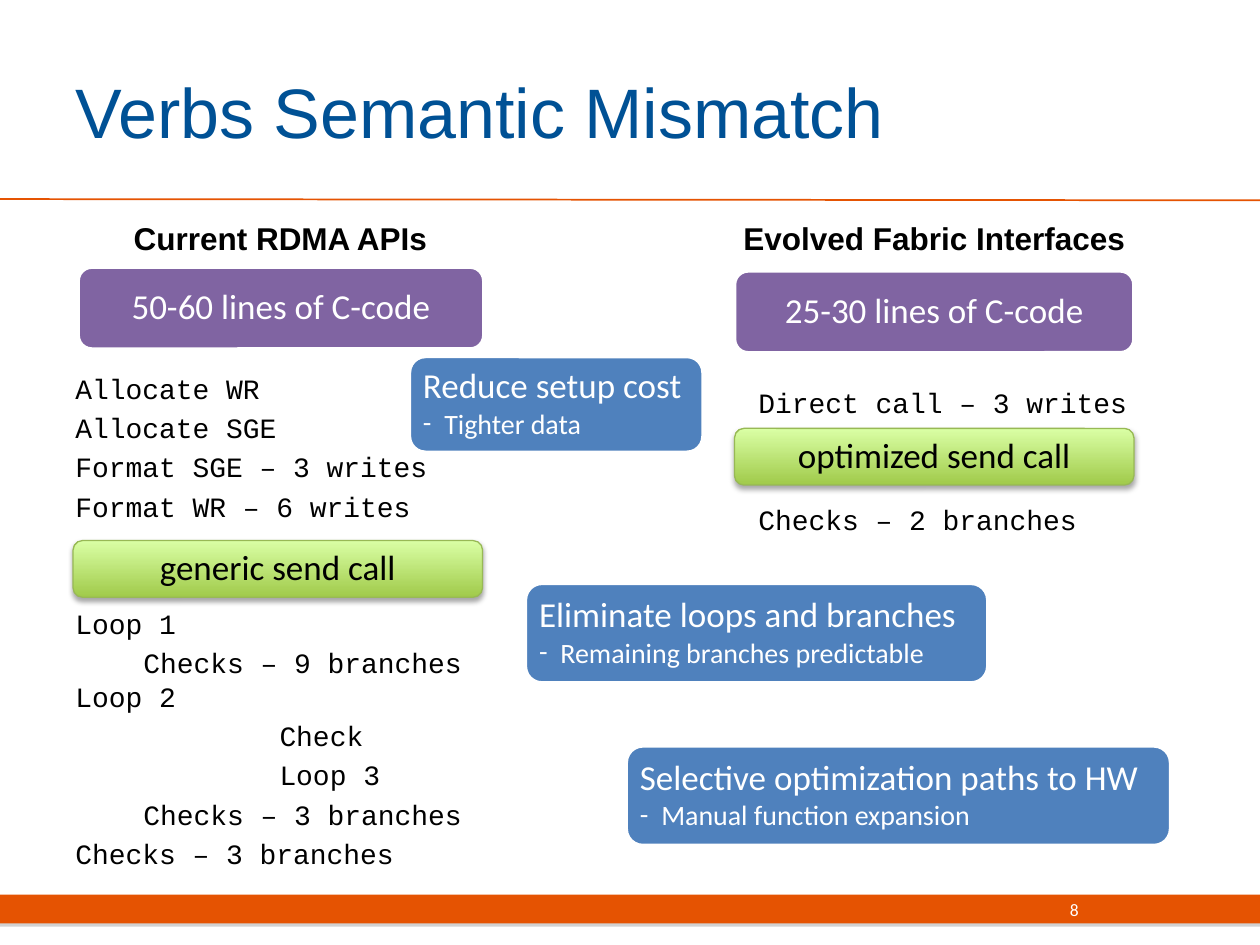
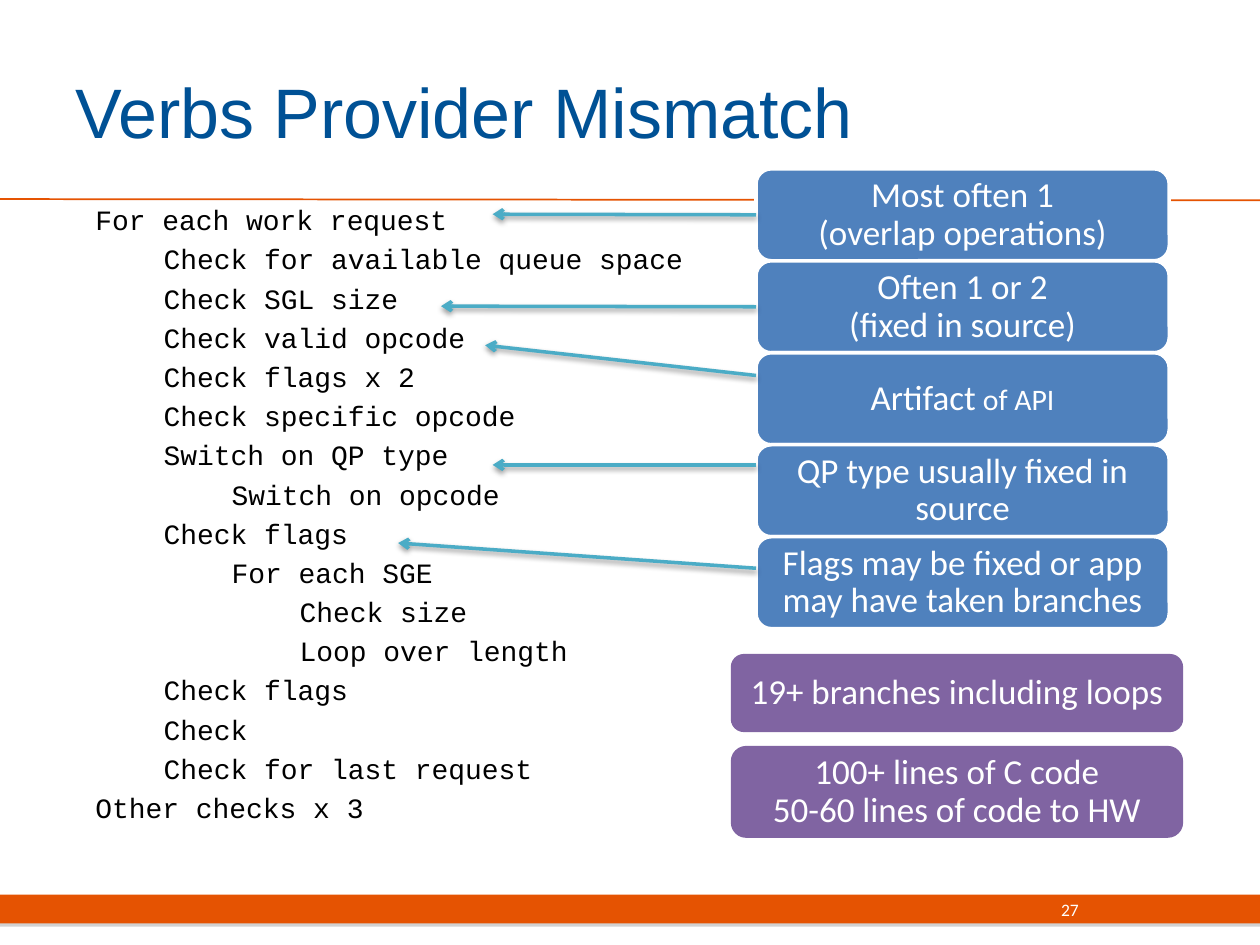
from dataclasses import dataclass, replace
from typing import Optional

from lxml.etree import SubElement
from pptx import Presentation
from pptx.dml.color import RGBColor
from pptx.enum.shapes import MSO_CONNECTOR as CONNECTOR, MSO_SHAPE as SHAPE
from pptx.enum.text import MSO_ANCHOR as ANCHOR, PP_ALIGN as ALIGN
from pptx.oxml.ns import qn
from pptx.util import Inches, Pt


@dataclass(frozen=True)
class BoxStyle:
    fill: str
    text: str
    outline: Optional[str] = None
    outline_width: float = 2
    fill_top: Optional[str] = None


@dataclass(frozen=True)
class Theme:
    orange: str = "E55302"
    blue: str = "005195"
    teal: str = "4BACC6"
    black: str = "000000"
    white: str = "FFFFFF"
    band_shadow: str = "808080"
    heading_font: str = "Arial"
    box_font: str = "Calibri"
    code_font: str = "Courier New"
    title_size: int = 40
    box_size: int = 20
    heading_size: int = 18
    remark_size: int = 17
    code_size: int = 16
    detail_size: int = 16
    number_size: int = 10
    code_line: float = 19.2
    code_gap: float = 3.2
    code_indent: float = 0.54
    summary: BoxStyle = BoxStyle("8064A2", "FFFFFF", "FFFFFF")
    callout: BoxStyle = BoxStyle("4F81BD", "FFFFFF", "FFFFFF")
    call: BoxStyle = BoxStyle("A0CA4A", "000000", "98B955", 0.75, "DAFFA5")


THEME = Theme()


def rgb(color):
    return RGBColor.from_string(color)


def inches(*lengths):
    return [Inches(length) for length in lengths]


def add_run(paragraph, text, font, size, color, bold=False):
    run = paragraph.add_run()
    run.text = text
    run.font.name = font
    run.font.size = Pt(size)
    run.font.bold = bold
    run.font.color.rgb = rgb(color)


def add_shadow(effects, color, alpha, blur, distance):
    shadow = SubElement(effects, qn("a:outerShdw"), blurRad=str(Pt(blur)),
                        dist=str(Pt(distance)), dir="5400000", rotWithShape="0")
    tint = SubElement(shadow, qn("a:srgbClr"), val=color)
    SubElement(tint, qn("a:alpha"), val=str(alpha * 1000))


def add_block(slide, preset, place, fill):
    block = slide.shapes.add_shape(preset, *inches(*place))
    block.shadow.inherit = False
    block.fill.solid()
    block.fill.fore_color.rgb = rgb(fill)
    block.line.fill.background()
    return block


def add_line(slide, start, end, color, width):
    line = slide.shapes.add_connector(CONNECTOR.STRAIGHT, *inches(*start, *end))
    line.line.color.rgb = rgb(color)
    line.line.width = Pt(width)
    effects = SubElement(line.element.spPr, qn("a:effectLst"))
    return line, effects


def add_label(slide, place, text, font, size, color, align=ALIGN.LEFT,
              anchor=ANCHOR.TOP, bold=False):
    frame = slide.shapes.add_textbox(*inches(*place)).text_frame
    frame.word_wrap = True
    frame.vertical_anchor = anchor
    paragraph = frame.paragraphs[0]
    paragraph.alignment = align
    add_run(paragraph, text, font, size, color, bold)


def add_box(slide, place, style, *lines, detail=None):
    box = add_block(slide, SHAPE.ROUNDED_RECTANGLE, place, style.fill)
    if style.fill_top:
        box.fill.gradient()
        box.fill.gradient_angle = 90
        for stop, color in zip(box.fill.gradient_stops, (style.fill, style.fill_top)):
            stop.color.rgb = rgb(color)
        add_shadow(box.element.spPr.find(qn("a:effectLst")), THEME.black, 35, 3.1, 1.8)
    if style.outline:
        box.line.color.rgb = rgb(style.outline)
        box.line.width = Pt(style.outline_width)
    frame = box.text_frame
    frame.word_wrap = True
    frame.vertical_anchor = ANCHOR.MIDDLE
    frame.margin_left = frame.margin_right = Inches(0.07)
    frame.margin_top = frame.margin_bottom = Inches(0.05)
    paragraph = frame.paragraphs[0]
    paragraph.alignment = ALIGN.LEFT if detail else ALIGN.CENTER
    paragraph.line_spacing = 0.9
    for index, line in enumerate(lines):
        if index:
            paragraph.add_line_break()
        add_run(paragraph, line, THEME.box_font, THEME.box_size, style.text)
    if detail:
        add_detail(frame, detail, style.text)
    return box


def add_detail(frame, text, color):
    paragraph = frame.add_paragraph()
    paragraph.alignment = ALIGN.LEFT
    hang = Inches(0.17)
    properties = paragraph._p.get_or_add_pPr()
    properties.set("marL", str(hang))
    properties.set("indent", str(-hang))
    SubElement(properties, qn("a:buFont"), typeface=THEME.box_font)
    SubElement(properties, qn("a:buChar"), char="-")
    add_run(paragraph, text, THEME.box_font, THEME.detail_size, color)


def add_code(slide, place, steps):
    frame = slide.shapes.add_textbox(*inches(*place)).text_frame
    frame.word_wrap = True
    for index, (level, text, *skipped) in enumerate(steps):
        paragraph = frame.add_paragraph() if index else frame.paragraphs[0]
        paragraph.line_spacing = Pt(THEME.code_line)
        if index:
            lines_skipped = skipped[0] if skipped else 0
            pitch = THEME.code_line + THEME.code_gap
            paragraph.space_before = Pt(THEME.code_gap + lines_skipped * pitch)
        indent = Inches(level * THEME.code_indent)
        paragraph._p.get_or_add_pPr().set("marL", str(indent))
        add_run(paragraph, text, THEME.code_font, THEME.code_size, THEME.black)


def add_pointer(slide, callout, start, end, joined):
    pointer, effects = add_line(slide, start, end, THEME.teal, 2)
    if joined:
        pointer.begin_connect(callout, 1)
    SubElement(pointer.element.spPr.find(qn("a:ln")), qn("a:tailEnd"), type="arrow")
    add_shadow(effects, THEME.black, 38, 3.1, 1.6)


def add_frame(deck, title, number):
    slide = deck.slides.add_slide(deck.slide_layouts[6])
    band = add_block(slide, SHAPE.RECTANGLE, (0, 7.1, 10, 0.23), THEME.orange)
    add_shadow(band.element.spPr.find(qn("a:effectLst")), THEME.band_shadow, 35, 0, 1.8)
    add_line(slide, (0, 1.58), (10, 1.59), THEME.orange, 1)
    add_label(slide, (0.5, 0.25, 8.17, 1.25), title, THEME.heading_font,
              THEME.title_size, THEME.blue, anchor=ANCHOR.MIDDLE)
    add_label(slide, (6.33, 7.02, 2.33, 0.4), number, THEME.box_font,
              THEME.number_size, THEME.white, ALIGN.RIGHT, ANCHOR.MIDDLE)
    return slide


def build_semantic_mismatch(deck):
    slide = add_frame(deck, "Verbs Semantic Mismatch", "8")
    add_code(slide, (0.5, 2.9, 4.42, 4.1), [
        (0, "Allocate WR"),
        (0, "Allocate SGE"),
        (0, "Format SGE – 3 writes"),
        (0, "Format WR – 6 writes"),
        (0, "Loop 1", 2),
        (1, "Checks – 9 branches"),
        (0, "Loop 2", -0.14),
        (3, "Check"),
        (3, "Loop 3"),
        (1, "Checks – 3 branches"),
        (0, "Checks – 3 branches"),
    ])
    add_code(slide, (5.92, 3.01, 3.58, 1.35), [
        (0, "Direct call – 3 writes"),
        (0, "Checks – 2 branches", 2),
    ])
    add_box(slide, (0.62, 2.12, 3.22, 0.65), THEME.summary, "50-60 lines of C-code")
    add_box(slide, (5.83, 2.15, 3.17, 0.65), THEME.summary, "25-30 lines of C-code")
    add_box(slide, (0.58, 4.29, 3.25, 0.45), THEME.call, "generic send call")
    add_box(slide, (5.83, 3.4, 3.17, 0.45), THEME.call, "optimized send call")
    add_box(slide, (3.25, 2.83, 2.33, 0.76), THEME.callout,
            "Reduce setup cost", detail="Tighter data")
    add_box(slide, (4.17, 4.63, 3.67, 0.79), THEME.callout,
            "Eliminate loops and branches", detail="Remaining branches predictable")
    add_box(slide, (4.97, 5.92, 4.32, 0.79), THEME.callout,
            "Selective optimization paths to HW", detail="Manual function expansion")
    for left, width, heading in ((0.65, 3.15, "Current RDMA APIs"),
                                 (5.59, 3.65, "Evolved Fabric Interfaces")):
        add_label(slide, (left, 1.69, width, 0.4), heading, THEME.heading_font,
                  THEME.heading_size, THEME.black, ALIGN.CENTER, bold=True)


def build_provider_mismatch(deck):
    slide = add_frame(deck, "Verbs Provider Mismatch", "27")
    add_code(slide, (0.66, 1.56, 5.1, 5.08), [
        (0, "For each work request"),
        (1, "Check for available queue space"),
        (1, "Check SGL size"),
        (1, "Check valid opcode"),
        (1, "Check flags x 2"),
        (1, "Check specific opcode"),
        (1, "Switch on QP type"),
        (2, "Switch on opcode"),
        (1, "Check flags"),
        (2, "For each SGE"),
        (3, "Check size"),
        (3, "Loop over length"),
        (1, "Check flags"),
        (1, "Check"),
        (1, "Check for last request"),
        (0, "Other checks x 3"),
    ])
    plain_summary = replace(THEME.summary, outline=None)
    add_box(slide, (5.8, 5.19, 3.59, 0.62), plain_summary, "19+ branches including loops")
    add_box(slide, (5.8, 5.92, 3.59, 0.73), plain_summary,
            "100+ lines of C code", "50-60 lines of code to HW")

    left, top, width, height = 6, 1.34, 3.28, 0.73
    remarks = [
        (("Most often 1", "(overlap operations)"), 1.7, (3.91, 1.7), True),
        (("Often 1 or 2", "(fixed in source)"), 2.43, (3.5, 2.43), True),
        (("Artifact",), 2.98, (3.85, 2.74), False),
        (("QP type usually fixed in source",), 3.69, (3.91, 3.69), False),
        (("Flags may be fixed or app may have taken branches",), 4.51, (3.16, 4.31), False),
    ]
    for row, (lines, start_y, target, joined) in enumerate(remarks):
        callout = add_box(slide, (left, top + row * height, width, height),
                          THEME.callout, *lines)
        if lines == ("Artifact",):
            add_run(callout.text_frame.paragraphs[0], " of API", THEME.box_font,
                    THEME.remark_size, THEME.callout.text)
        add_pointer(slide, callout, (left, start_y), target, joined)


def main():
    deck = Presentation()
    deck.slide_width, deck.slide_height = inches(10, 7.5)
    build_semantic_mismatch(deck)
    build_provider_mismatch(deck)
    deck.save("out.pptx")


if __name__ == "__main__":
    main()
